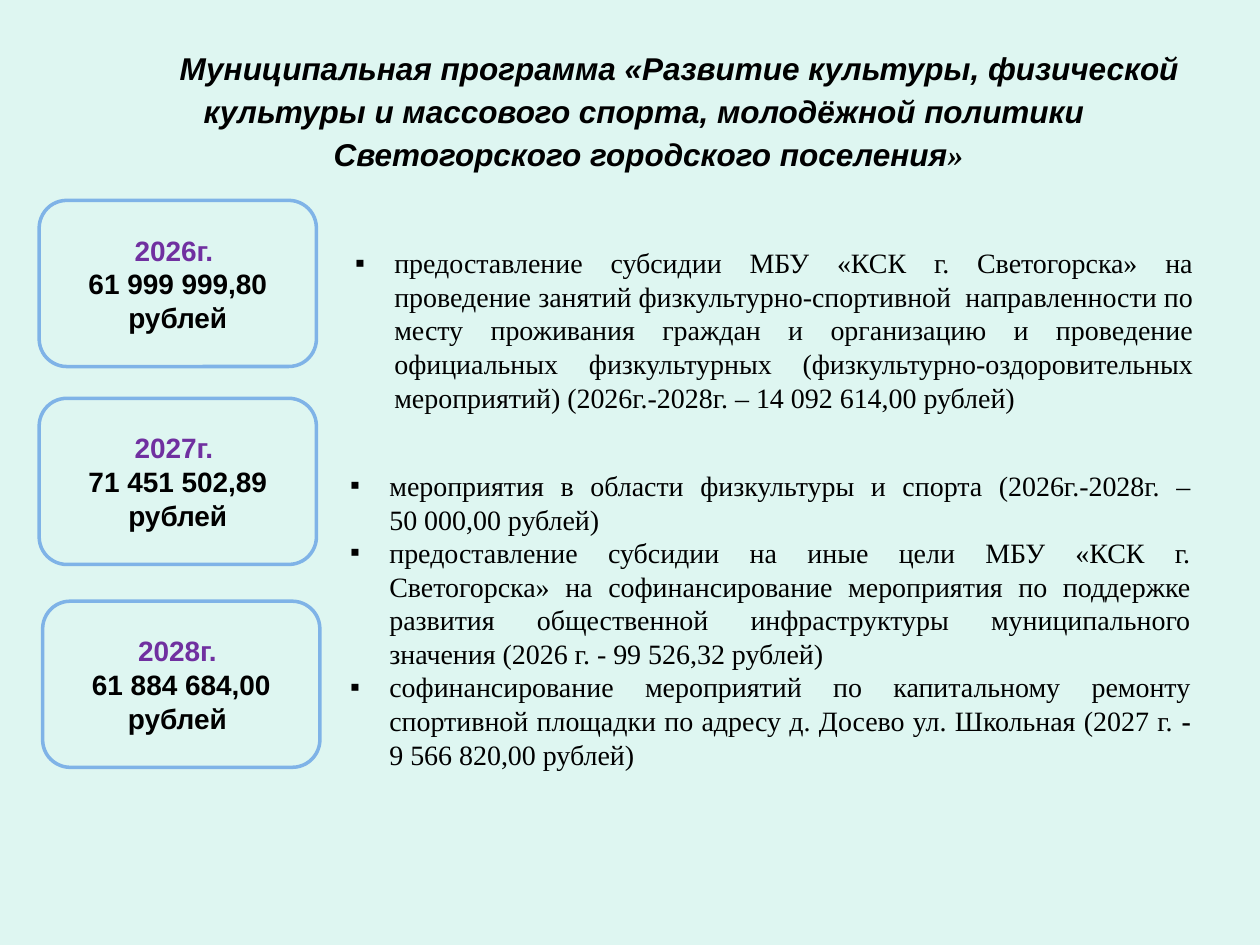
from copy import deepcopy
from dataclasses import dataclass

from lxml import etree
from pptx import Presentation
from pptx.dml.color import RGBColor
from pptx.enum.shapes import MSO_SHAPE
from pptx.enum.text import MSO_ANCHOR, MSO_AUTO_SIZE, PP_ALIGN
from pptx.oxml.ns import qn
from pptx.util import Cm, Pt

ROUNDED = MSO_SHAPE.ROUNDED_RECTANGLE
MIDDLE = MSO_ANCHOR.MIDDLE
FIT_SHAPE = MSO_AUTO_SIZE.SHAPE_TO_FIT_TEXT
CENTER, JUSTIFY = PP_ALIGN.CENTER, PP_ALIGN.JUSTIFY


@dataclass(frozen=True)
class Theme:
    background: RGBColor = RGBColor(0xDE, 0xF6, 0xF1)
    text: RGBColor = RGBColor(0, 0, 0)
    year: RGBColor = RGBColor(0x70, 0x30, 0xA0)
    outline: RGBColor = RGBColor(0x7F, 0xB3, 0xE7)
    sans: str = "Arial"
    serif: str = "Times New Roman"
    title_size: Pt = Pt(18)
    body_size: Pt = Pt(16)


THEME = Theme()
TITLE_FONT = {"name": THEME.sans, "size": THEME.title_size, "bold": True, "italic": True}
CARD_FONT = {"name": THEME.sans, "size": THEME.body_size, "bold": True}
LIST_FONT = {"name": THEME.serif, "size": THEME.body_size}

TITLE = ("Муниципальная программа «Развитие культуры, физической культуры и массового "
         "спорта, молодёжной политики \nСветогорского городского поселения")

# Each item is a list of (text, bold) pieces
SUBSIDY = [
    [("предоставление субсидии МБУ «КСК г. Светогорска» на проведение занятий "
      "физкультурно-спортивной  направленности по месту проживания граждан и организацию "
      "и проведение официальных физкультурных (физкультурно-оздоровительных мероприятий) "
      "(2026г.-2028г. – 14 092 614,00 рублей)", False)],
]
MEASURES = [
    [("мероприятия в области физкультуры и спорта (2026г.-2028г. –\n"
      "50 000,00 рублей)", False)],
    [("предоставление субсидии на иные цели МБУ «КСК г. Светогорска» на софинансирование "
      "мероприятия по поддержке развития общественной инфраструктуры муниципального "
      "значения (2026 г. - 99 526,32 рублей)", False)],
    [("софинансирование мероприятий по капитальному ремонту спортивной площадки по адресу "
      "д. Досево ул. Школьная (2027 г.", False),
     (" - ", True),
     ("9 566 820,00 рублей)", False)],
]

# Year, amount, left and top in cm
BUDGETS = [
    ("2026г. ", "61 999 999,80 рублей", 0.79, 4.04),
    ("2027г. ", "71 451 502,89 рублей", 0.79, 8.03),
    ("2028г. ", "61 884 684,00 рублей ", 0.86, 12.12),
]


def write(paragraph, text, font, color=THEME.text):
    """Add text in one format; a newline becomes a line break of the same size."""
    for index, line in enumerate(text.split("\n")):
        if index:
            paragraph.add_line_break()
            line_break = paragraph._p.findall(qn("a:br"))[-1]
            line_break.append(deepcopy(run._r.rPr))
        if line:
            run = paragraph.add_run()
            run.text = line
            for key, value in font.items():
                setattr(run.font, key, value)
            run.font.color.rgb = color


def set_indent(paragraph, left, first):
    properties = paragraph._p.get_or_add_pPr()
    properties.set("marL", str(left))
    properties.set("indent", str(first))
    return properties


def add_text_frame(slide, box):
    frame = slide.shapes.add_textbox(*box).text_frame
    frame.word_wrap = True
    frame.auto_size = FIT_SHAPE
    return frame


def add_title(slide, box):
    heading = add_text_frame(slide, box).paragraphs[0]
    properties = set_indent(heading, 0, Cm(1.25))
    tabs = etree.SubElement(properties, qn("a:tabLst"))
    etree.SubElement(tabs, qn("a:tab"), pos=str(Cm(16.51)), algn="l")
    heading.alignment = CENTER
    heading.line_spacing = 1.15
    heading.space_after = Pt(10)
    write(heading, TITLE, TITLE_FONT)
    write(heading, "»", {**TITLE_FONT, "name": THEME.serif})


def add_bullet_list(slide, box, items):
    frame = add_text_frame(slide, box)
    for index, pieces in enumerate(items):
        item = frame.add_paragraph() if index else frame.paragraphs[0]
        properties = set_indent(item, Cm(0.79), -Cm(0.79))
        etree.SubElement(properties, qn("a:buFont"), typeface=THEME.sans)
        etree.SubElement(properties, qn("a:buChar"), char="▪")
        item.alignment = JUSTIFY
        for text, bold in pieces:
            write(item, text, {**LIST_FONT, "bold": bold})


def add_budget_card(slide, box, year, amount):
    card = slide.shapes.add_shape(ROUNDED, *box)
    card.shadow.inherit = False
    card.fill.solid()
    card.fill.fore_color.rgb = THEME.background
    card.line.color.rgb = THEME.outline
    card.line.width = Pt(2)
    frame = card.text_frame
    frame.word_wrap = True
    frame.vertical_anchor = MIDDLE
    label = frame.paragraphs[0]
    label.alignment = CENTER
    write(label, year + "\n", CARD_FONT, THEME.year)
    write(label, amount, CARD_FONT)


def main():
    deck = Presentation()
    deck.slide_width, deck.slide_height = Cm(25.4), Cm(19.05)
    slide = deck.slides.add_slide(deck.slide_layouts[6])
    slide.background.fill.solid()
    slide.background.fill.fore_color.rgb = THEME.background

    # Heading
    add_title(slide, (Cm(1.9), Cm(0.74), Cm(22.35), Cm(2.92)))

    # Spending items
    add_bullet_list(slide, (Cm(6.91), Cm(4.83), Cm(17.4), Cm(3.68)), SUBSIDY)
    add_bullet_list(slide, (Cm(6.81), Cm(9.32), Cm(17.45), Cm(7.09)), MEASURES)

    # Yearly budgets
    for year, amount, left, top in BUDGETS:
        add_budget_card(slide, (Cm(left), Cm(top), Cm(5.59), Cm(3.35)), year, amount)

    deck.save("out.pptx")


if __name__ == "__main__":
    main()
